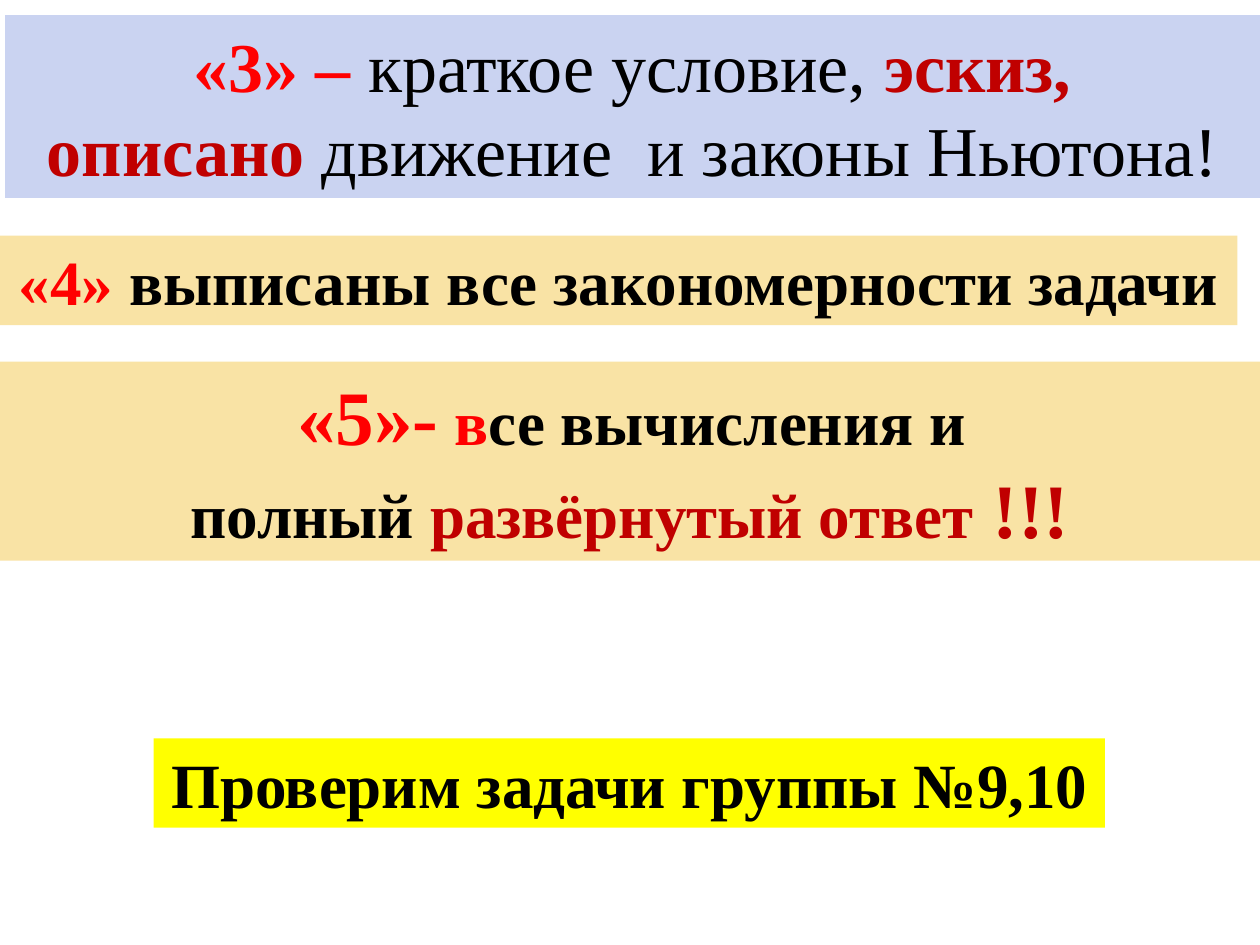
from dataclasses import dataclass

from pptx import Presentation
from pptx.dml.color import RGBColor
from pptx.enum.shapes import MSO_SHAPE
from pptx.enum.text import MSO_ANCHOR, MSO_AUTO_SIZE, PP_ALIGN
from pptx.util import Inches, Pt

COLORS = {
    "blue": "CAD3F1",
    "sand": "F9E3A5",
    "yellow": "FFFF00",
    "red": "FF0000",
    "crimson": "C00000",
    "black": "000000",
}
FONT = "Times New Roman"
WIDTH, HEIGHT = Inches(10), Inches(7.5)


@dataclass(frozen=True)
class Span:
    text: str
    color: str = "black"
    size: int = 36
    bold: bool = True


@dataclass(frozen=True)
class Banner:
    left: float
    top: float
    width: float
    height: float
    fill: str
    lines: tuple[tuple[Span, ...], ...]
    wrap: bool = True


BANNERS = (
    Banner(0, 2.87 / 7.5, 1, 1.58 / 7.5, "sand", (
        (Span(" «5»-", "red", 44), Span(" в", "red"), Span("се вычисления и ")),
        (Span("полный "), Span("развёрнутый ответ", "crimson"),
         Span(" !!!", "crimson", 44)),
    )),
    Banner(0.004, 0.12 / 7.5, 0.996, 1.45 / 7.5, "blue", (
        (Span(" «3» – ", "red", 40), Span("краткое условие, ", size=40, bold=False),
         Span("эскиз, ", "crimson", 40)),
        (Span("описано ", "crimson", 40),
         Span("движение  и законы Ньютона!", size=40, bold=False)),
    )),
    Banner(0, 1.87 / 7.5, 0.982, 0.71 / 7.5, "sand", (
        (Span("«4» ", "red"), Span("выписаны все закономерности задачи")),
    ), wrap=False),
    Banner(0.122, 5.86 / 7.5, 0.755, 0.71 / 7.5, "yellow", (
        (Span("Проверим задачи группы №9,10"),),
    ), wrap=False),
)


def add_text(paragraph, text: str, *, color: str, size: int, bold: bool) -> None:
    run = paragraph.add_run()
    run.text = text
    run.font.name = FONT
    run.font.size = Pt(size)
    run.font.bold = bold
    run.font.color.rgb = RGBColor.from_string(COLORS[color])


def add_banner(slide, banner: Banner) -> None:
    shape = slide.shapes.add_shape(
        MSO_SHAPE.RECTANGLE,
        round(banner.left * WIDTH), round(banner.top * HEIGHT),
        round(banner.width * WIDTH), round(banner.height * HEIGHT),
    )
    shape.shadow.inherit = False
    shape.fill.solid()
    shape.fill.fore_color.rgb = RGBColor.from_string(COLORS[banner.fill])
    shape.line.fill.background()
    frame = shape.text_frame
    frame.word_wrap = banner.wrap
    frame.auto_size = MSO_AUTO_SIZE.SHAPE_TO_FIT_TEXT
    frame.vertical_anchor = MSO_ANCHOR.MIDDLE
    for index, line in enumerate(banner.lines):
        paragraph = frame.add_paragraph() if index else frame.paragraphs[0]
        paragraph.alignment = PP_ALIGN.CENTER
        for span in line:
            add_text(paragraph, span.text, color=span.color,
                     size=span.size, bold=span.bold)


def main() -> None:
    presentation = Presentation()
    presentation.slide_width, presentation.slide_height = WIDTH, HEIGHT
    slide = presentation.slides.add_slide(presentation.slide_layouts[6])
    for banner in BANNERS:
        add_banner(slide, banner)
    presentation.save("out.pptx")


if __name__ == "__main__":
    main()
